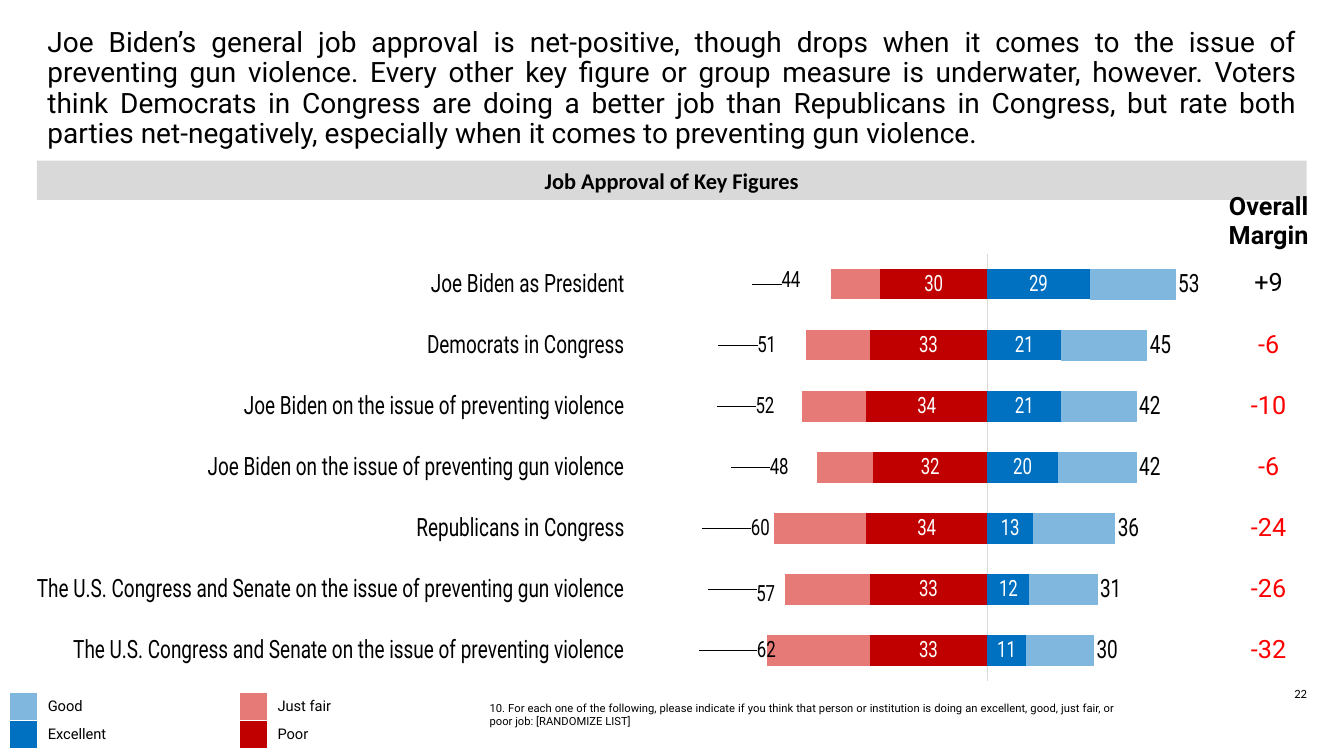
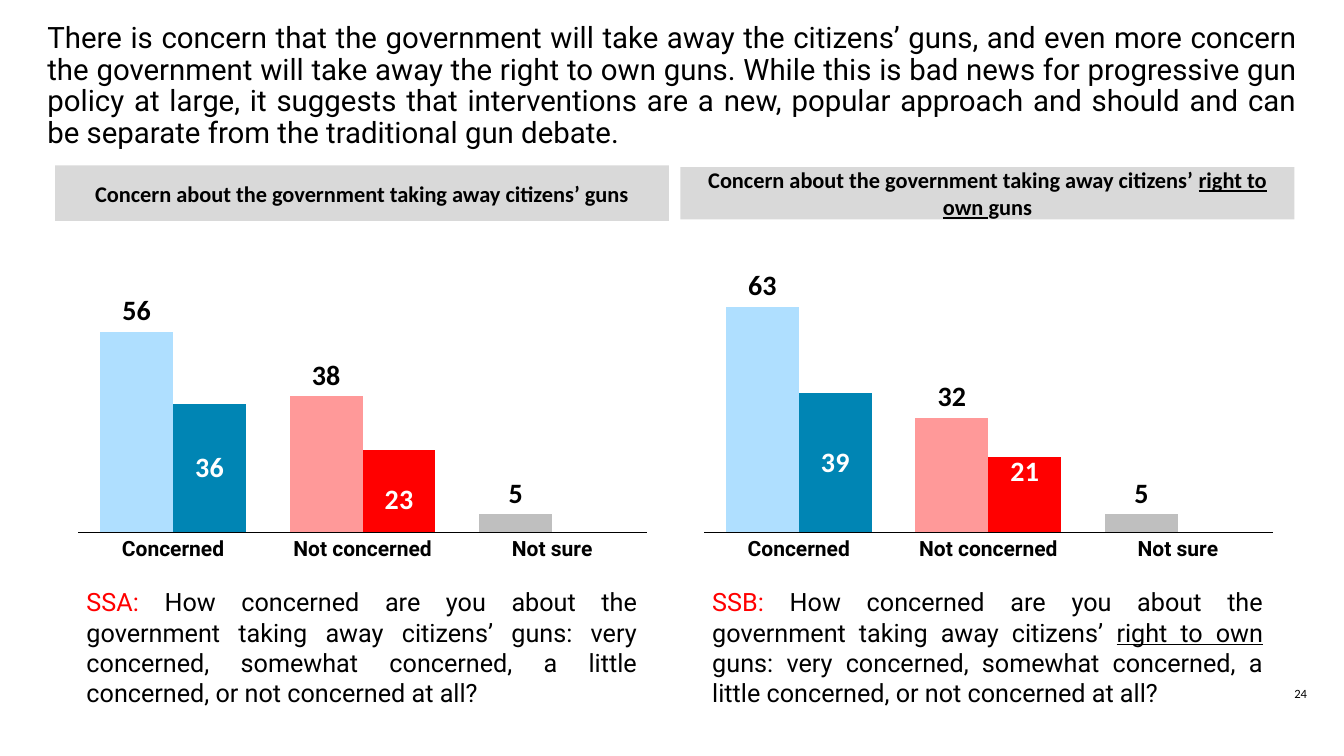
from copy import deepcopy
from dataclasses import dataclass, field
from typing import NamedTuple, Optional

from pptx import Presentation, oxml
from pptx.chart import data as chart_data
from pptx.dml.color import RGBColor
from pptx.enum import chart as chart_enum, shapes, text
from pptx.oxml import ns
from pptx.util import Cm, Pt

ALIGN, LABEL, KIND = text.PP_ALIGN, chart_enum.XL_LABEL_POSITION, chart_enum.XL_CHART_TYPE
NO_TABLE_STYLE = "{2D5ABB26-0587-4C30-8999-92F81FD0307C}"
ABSOLUTE = "#,##0;#,##0"

@dataclass(frozen=True)
class Theme:
    body_font: str = "Roboto"
    band_font: str = "Calibri"
    black: str = "000000"
    white: str = "FFFFFF"
    alert: str = "FF0000"
    band: str = "D9D9D9"
    excellent: str = "0070C0"
    good: str = "7FB7DF"
    poor: str = "C00000"
    fair: str = "E57A77"
    concerned: str = "AFDFFF"
    very_concerned: str = "0085B4"
    unconcerned: str = "FF9999"
    unsure: str = "BFBFBF"
    note_size: float = 8
    number_size: float = 9
    legend_size: float = 10.5
    axis_size: float = 15
    band_size: float = 16
    body_size: float = 18
    value_size: float = 20

THEME = Theme()

class Box(NamedTuple):
    """A frame in centimetres."""
    left: float
    top: float
    width: float
    height: float

    def lengths(self) -> list:
        return [Cm(value) for value in self]

class Run(NamedTuple):
    text: str
    color: str = THEME.black
    bold: bool = False
    underline: bool = False

class LabelStyle(NamedTuple):
    size: float
    color: str
    position: LABEL
    bold: bool = False
    font: str = THEME.body_font
    number_format: str = "General"

class Offset(NamedTuple):
    """A label shift, as a share of the chart."""
    x: float
    y: float = 0

@dataclass
class Series:
    values: list
    fill: Optional[str] = None
    label: Optional[LabelStyle] = None
    point_fills: dict = field(default_factory=dict)
    offsets: dict = field(default_factory=dict)

class ConcernPanel(NamedTuple):
    left: float
    band: Box
    band_runs: list
    question: list
    totals: list
    intense: list
    offset: Offset

def chart_xml(tag: str, content: str = "", attributes: str = ""):
    return oxml.parse_xml(f'<c:{tag} {ns.nsdecls("c")} {attributes}>{content}</c:{tag}>')

def set_font(font, size: float, color: str, name: str, bold: bool = False) -> None:
    font.size, font.name, font.bold = Pt(size), name, bold
    font.color.rgb = RGBColor.from_string(color)

def set_fill(fill, color: Optional[str]) -> None:
    if color is None:
        fill.background()
    else:
        fill.solid()
        fill.fore_color.rgb = RGBColor.from_string(color)

def set_line(line, color: str, width: float) -> None:
    line.color.rgb = RGBColor.from_string(color)
    line.width = Pt(width)

def write(paragraph, runs: list, size: float, align: ALIGN = ALIGN.LEFT, font: str = THEME.body_font) -> None:
    paragraph.alignment = align
    for item in runs:
        run = paragraph.add_run()
        run.text = item.text
        set_font(run.font, size, item.color, font, item.bold)
        if item.underline:
            run.font.underline = True

def add_text(slide, box: Box, runs: list, size: float, align: ALIGN = ALIGN.JUSTIFY,
             font: str = THEME.body_font) -> None:
    frame = slide.shapes.add_textbox(*box.lengths()).text_frame
    frame.word_wrap = True
    write(frame.paragraphs[0], runs, size, align, font)

def add_band(slide, box: Box, runs: list) -> None:
    band = slide.shapes.add_shape(shapes.MSO_SHAPE.RECTANGLE, *box.lengths())
    band.shadow.inherit = False
    set_fill(band.fill, THEME.band)
    band.line.fill.background()
    band.text_frame.word_wrap = True
    band.text_frame.vertical_anchor = text.MSO_ANCHOR.MIDDLE
    write(band.text_frame.paragraphs[0], runs, THEME.band_size, ALIGN.CENTER, THEME.band_font)

def add_slide(presentation, title: str, size: float, top: float, number: int):
    slide = presentation.slides.add_slide(presentation.slide_layouts[5])
    holder = slide.shapes.title
    holder.left, holder.top, holder.width, holder.height = Box(0.94, top, 32, 3.68).lengths()
    frame = holder.text_frame
    frame.word_wrap, frame.auto_size = True, text.MSO_AUTO_SIZE.NONE
    frame.vertical_anchor = text.MSO_ANCHOR.MIDDLE
    frame.paragraphs[0].line_spacing = 0.9
    write(frame.paragraphs[0], [Run(title)], size, ALIGN.JUSTIFY)
    add_text(slide, Box(31.83, 17.15, 1.9, 0.84), [Run(str(number))], THEME.number_size, ALIGN.CENTER,
             THEME.band_font)
    return slide

def place_plot(chart, **shares: float) -> None:
    """Fix the inner plot area, as shares x, y, w and h of the chart."""
    plot_area = chart.element.xpath(".//c:plotArea")[0]
    for layout in plot_area.findall(ns.qn("c:layout")):
        plot_area.remove(layout)
    values = "".join(f'<c:{tag} val="{value}"/>' for tag, value in shares.items())
    plot_area.insert(0, chart_xml("layout", '<c:manualLayout><c:layoutTarget val="inner"/><c:xMode val="edge"/>'
                                  f'<c:yMode val="edge"/>{values}</c:manualLayout>'))

def style_label(label, style: LabelStyle) -> None:
    set_font(label.font, style.size, style.color, style.font, style.bold)
    label.position = style.position

def shift_labels(chart, position: int, series, item: Series) -> None:
    """Move single labels without drawing leader lines."""
    labels = chart.element.xpath(f".//c:ser[c:idx/@val={position}]/c:dLbls")[0]
    for index, offset in item.offsets.items():
        style_label(series.points[index].data_label, item.label)
        anchor = labels.xpath(f"c:dLbl/c:idx[@val={index}]")[0]
        anchor.addnext(chart_xml("numFmt", "", f'formatCode="{item.label.number_format}" sourceLinked="0"'))
        anchor.addnext(chart_xml("layout", f'<c:manualLayout><c:x val="{offset.x}"/><c:y val="{offset.y}"/>'
                                 '</c:manualLayout>'))
    labels.append(chart_xml("extLst", '<c:ext uri="{CE6537A1-D6FC-4f65-9D91-7224C49458BB}" xmlns:c15='
                            '"http://schemas.microsoft.com/office/drawing/2012/chart">'
                            '<c15:showLeaderLines val="0"/></c:ext>'))

def style_series(chart, position: int, item: Series) -> None:
    series = chart.plots[0].series[position]
    set_fill(series.format.fill, item.fill)
    for index, color in item.point_fills.items():
        set_fill(series.points[index].format.fill, color)
    if item.label:
        labels = series.data_labels
        labels.show_value, labels.number_format_is_linked = True, False
        labels.number_format = item.label.number_format
        style_label(labels, item.label)
    if item.offsets:
        shift_labels(chart, position, series, item)

def add_bars(slide, box: Box, kind: KIND, categories: list, series: list, limits: tuple, gap: int, overlap: int):
    content = chart_data.CategoryChartData()
    content.categories = categories
    for number, item in enumerate(series, 1):
        content.add_series(f"Series {number}", item.values)
    chart = slide.shapes.add_chart(kind, *box.lengths(), content).chart
    chart.has_legend = chart.has_title = False
    set_font(chart.font, THEME.axis_size, THEME.black, THEME.band_font)
    plot, values = chart.plots[0], chart.value_axis
    plot.gap_width, plot.overlap, plot.vary_by_categories = gap, overlap, False
    values.minimum_scale, values.maximum_scale = limits
    values.has_major_gridlines = values.visible = False
    chart.category_axis.major_tick_mark = chart_enum.XL_TICK_MARK.NONE
    for position, item in enumerate(series):
        style_series(chart, position, item)
    return chart

def move_to_right_axis(chart, maximum: float) -> None:
    """Give the second series its own bars on a hidden right axis."""
    first = chart.element.xpath(".//c:barChart")[0]
    second = deepcopy(first)
    first.remove(first.findall(ns.qn("c:ser"))[1])
    second.remove(second.findall(ns.qn("c:ser"))[0])
    first.addnext(second)
    axes = chart.element.xpath(".//c:catAx | .//c:valAx")
    copies = [deepcopy(axis) for axis in axes]
    names = {axis.find(ns.qn("c:axId")).get("val"): str(number) for number, axis in enumerate(axes, 5001)}
    for element in [second, *copies]:
        for reference in element.xpath("c:axId | c:crossAx"):
            reference.set("val", names[reference.get("val")])
    for axis in copies:
        axis.find(ns.qn("c:delete")).set("val", "1")
    scaling = copies[1].find(ns.qn("c:scaling"))
    scaling.remove(scaling.find(ns.qn("c:min")))
    scaling.find(ns.qn("c:max")).set("val", str(maximum))
    copies[1].find(ns.qn("c:axPos")).set("val", "r")
    copies[1].find(ns.qn("c:crosses")).set("val", "max")
    for axis in reversed(copies):
        axes[-1].addnext(axis)

def add_plain_table(slide, left: float, top: float, widths: list, heights: list):
    box = Box(left, top, sum(widths), sum(heights))
    frame = slide.shapes.add_table(len(heights), len(widths), *box.lengths())
    frame.element.xpath(".//a:tableStyleId")[0].text = NO_TABLE_STYLE
    table = frame.table
    table.first_row = table.horz_banding = False
    for column, width in zip(table.columns, widths):
        column.width = Cm(width)
    for row, height in zip(table.rows, heights):
        row.height = Cm(height)
    for cell in table.iter_cells():
        cell.fill.background()
    return table

def add_legend(slide) -> None:
    entries = [(THEME.good, "Good"), (THEME.fair, "Just fair"), (THEME.excellent, "Excellent"), (THEME.poor, "Poor")]
    table = add_plain_table(slide, 0.24, 17.46, [0.71, 5.08, 0.71, 5.33], [0.7, 0.7])
    cells = list(table.iter_cells())
    for swatch, caption, (color, name) in zip(cells[::2], cells[1::2], entries):
        set_fill(swatch.fill, color)
        swatch.text_frame.paragraphs[0]._p.append(oxml.parse_xml(
            f'<a:endParaRPr {ns.nsdecls("a")} sz="{int(THEME.legend_size * 100)}"/>'))
        write(caption.text_frame.paragraphs[0], [Run(name)], THEME.legend_size)
    for cell in cells:
        for position, side in enumerate("LRTB"):
            cell._tc.get_or_add_tcPr().insert(position, oxml.parse_xml(
                f'<a:ln{side} {ns.nsdecls("a")} w="12700"><a:solidFill><a:srgbClr val="{THEME.white}"/>'
                f'</a:solidFill></a:ln{side}>'))

def add_margins(slide, margins: list) -> None:
    table = add_plain_table(slide, 30.84, 4.8, [2.26], [1.57] + [1.54] * len(margins))
    runs = [Run(f"{margin:+d}", THEME.alert if margin < 0 else THEME.black) for margin in margins]
    for cell, run in zip(table.iter_cells(), [Run("Overall Margin", bold=True), *runs]):
        cell.margin_left = cell.margin_right = cell.margin_top = cell.margin_bottom = 0
        cell.vertical_anchor = text.MSO_ANCHOR.MIDDLE
        write(cell.text_frame.paragraphs[0], [run], THEME.body_size, ALIGN.CENTER)

def build_approval(presentation) -> None:
    slide = add_slide(presentation, "Joe Biden’s general job approval is net-positive, though drops when it comes to the issue of preventing gun violence. Every other key figure or group measure is underwater, however. Voters think Democrats in Congress are doing a better job than Republicans in Congress, but rate both parties net-negatively, especially when it comes to preventing gun violence.", 20, 0.4, 22)
    add_band(slide, Box(0.93, 4.05, 32, 0.99), [Run("Job Approval of Key Figures", bold=True)])
    violence, gun_violence = (f"on the issue of preventing {subject}" for subject in ("violence", "gun violence"))
    congress = "The U.S. Congress and Senate"
    categories = ["Joe Biden as President", "Democrats in Congress", f"Joe Biden {violence}",
                  f"Joe Biden {gun_violence}", "Republicans in Congress",
                  f"{congress} {gun_violence}", f"{congress} {violence}"]
    inside = LabelStyle(16, THEME.white, LABEL.CENTER, number_format=ABSOLUTE)
    offsets = [Offset(0.04, -0.01), Offset(0.05), Offset(0.05), Offset(0.05), Offset(0.06), Offset(0.06, 0.01),
               Offset(0.07)]
    series = [
        Series([29, 21, 21, 20, 13, 12, 11], THEME.excellent, inside),
        Series([24, 24, 21, 22, 23, 19, 19], THEME.good),
        Series([53, 45, 42, 42, 36, 31, 30], label=LabelStyle(18, THEME.black, LABEL.INSIDE_BASE)),
        Series([-30, -33, -34, -32, -34, -33, -33], THEME.poor, inside),
        Series([-14, -18, -18, -16, -26, -24, -29], THEME.fair),
        Series([-44, -51, -52, -48, -60, -57, -62], label=inside._replace(color=THEME.black),
               offsets=dict(enumerate(offsets)))]
    chart = add_bars(slide, Box(0.93, 6.38, 32, 10.97), KIND.BAR_STACKED, categories, series, (-100, 90), 100, 100)
    set_line(chart.plots[0].series[1].format.line, THEME.good, 0.75)
    axis = chart.category_axis
    axis.reverse_order, axis.tick_label_position = True, chart_enum.XL_TICK_LABEL_POSITION.LOW
    set_font(axis.tick_labels.font, THEME.body_size, THEME.black, THEME.body_font)
    set_line(axis.format.line, THEME.band, 0.75)
    place_plot(chart, x=0.294, y=0, w=0.706, h=0.983)
    add_legend(slide)
    add_text(slide, Box(12.09, 17.55, 16.28, 0.94), [Run("10. For each one of the following, please indicate if you think that person or institution is doing an excellent, good, just fair, or poor job: [RANDOMIZE LIST]")], THEME.note_size)
    add_margins(slide, [9, -6, -10, -6, -24, -26, -32])

def add_concern_panel(slide, panel: ConcernPanel) -> None:
    total = LabelStyle(THEME.value_size, THEME.black, LABEL.OUTSIDE_END, True, THEME.band_font)
    intense = total._replace(color=THEME.white, position=LABEL.CENTER)
    series = [Series(panel.totals, THEME.concerned, total, {1: THEME.unconcerned, 2: THEME.unsure}),
              Series(panel.intense, THEME.very_concerned, intense, {1: THEME.alert}, {1: panel.offset})]
    chart = add_bars(slide, Box(panel.left, 5.43, 14.38, 9.93), KIND.COLUMN_CLUSTERED,
                     ["Concerned", "Not concerned", "Not sure"], series, (0, 85), 60, 0)
    set_font(chart.category_axis.tick_labels.font, THEME.axis_size, THEME.black, THEME.body_font, True)
    set_line(chart.category_axis.format.line, THEME.black, 0.25)
    place_plot(chart, x=0.003, y=0.033, w=0.997, h=0.771)
    move_to_right_axis(chart, 50)
    add_band(slide, panel.band, panel.band_runs)
    add_text(slide, Box(panel.left, 14.66, 14.38, 3.33), panel.question, THEME.body_size)

def build_concern(presentation) -> None:
    slide = add_slide(presentation, "There is concern that the government will take away the citizens’ guns, and even more concern the government will take away the right to own guns. While this is bad news for progressive gun policy at large, it suggests that interventions are a new, popular approach and should and can be separate from the traditional gun debate.", 21, 0.34, 24)
    subject = "the government taking away citizens’ "
    scale = "guns: very concerned, somewhat concerned, a little concerned, or not concerned at all?"
    right, heading = Run("right to own ", underline=True), Run(f"Concern about {subject}", bold=True)
    ask = f"How concerned are you about {subject}"
    add_concern_panel(slide, ConcernPanel(
        1.93, Box(1.39, 4.17, 15.47, 1.4), [heading._replace(text=f"{heading.text}guns")],
        [Run("SSA: ", THEME.alert), Run(ask + scale)], [56, 38, 5], [36, 23, None], Offset(0, 0.02)))
    add_concern_panel(slide, ConcernPanel(
        17.7, Box(17.15, 4.21, 15.47, 1.32), [heading, right._replace(bold=True), Run("guns", bold=True)],
        [Run("SSB: ", THEME.alert), Run(ask), right, Run(scale)], [63, 32, 5], [39, 21, None], Offset(0, -0.06)))

def main() -> None:
    presentation = Presentation()
    presentation.slide_width, presentation.slide_height = Cm(33.87), Cm(19.05)
    build_approval(presentation)
    build_concern(presentation)
    presentation.save("out.pptx")

if __name__ == "__main__":
    main()
